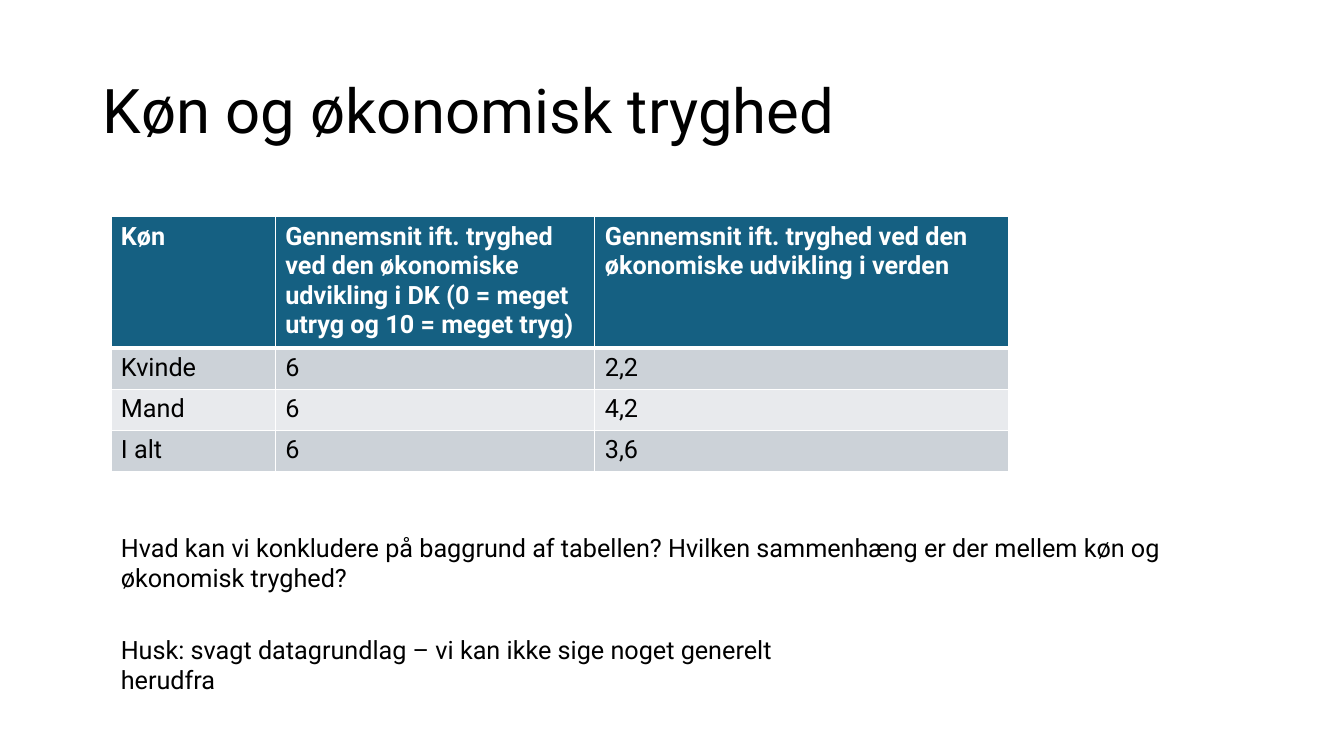
from dataclasses import dataclass

from lxml import etree
from pptx import Presentation
from pptx.dml.color import RGBColor
from pptx.enum import text
from pptx.oxml import ns
from pptx.util import Inches, Pt


@dataclass(frozen=True)
class Theme:
    font: str = "Roboto"
    title_size: int = 44
    body_size: int = 18
    ink: str = "000000"
    paper: str = "FFFFFF"
    header: str = "156082"
    bands: tuple = ("CCD2D8", "E8EAED")
    thin: int = 1
    thick: int = 3


THEME = Theme()

COLUMN_WIDTHS = (1.63, 3.17, 4.1)
HEADER_HEIGHT = 1.28
ROW_HEIGHT = 0.41
ROWS = (
    (
        "Køn",
        "Gennemsnit ift. tryghed ved den økonomiske udvikling i DK "
        "(0 = meget utryg og 10 = meget tryg)",
        "Gennemsnit ift. tryghed ved den økonomiske udvikling i verden",
    ),
    ("Kvinde", "6", "2,2"),
    ("Mand", "6", "4,2"),
    ("I alt", "6", "3,6"),
)


def add_run(paragraph, wording, size, color=THEME.ink, bold=False):
    run = paragraph.add_run()
    run.text = wording
    run.font.name = THEME.font
    run.font.size = Pt(size)
    run.font.bold = bold
    run.font.color.rgb = RGBColor.from_string(color)


def add_text(slide, wording, left, top, width, height, size=THEME.body_size,
             anchor=text.MSO_ANCHOR.TOP, line_spacing=1.0):
    box = slide.shapes.add_textbox(
        Inches(left), Inches(top), Inches(width), Inches(height))
    frame = box.text_frame
    frame.word_wrap = True
    frame.vertical_anchor = anchor
    paragraph = frame.paragraphs[0]
    paragraph.line_spacing = line_spacing
    add_run(paragraph, wording, size)


def add_borders(cell, row_index):
    widths = {"lnL": THEME.thin, "lnR": THEME.thin,
              "lnT": THEME.thick if row_index == 1 else THEME.thin,
              "lnB": THEME.thick if row_index == 0 else THEME.thin}
    properties = cell._tc.get_or_add_tcPr()
    for side, width in widths.items():
        line = etree.SubElement(properties, ns.qn(f"a:{side}"), w=str(Pt(width)))
        fill = etree.SubElement(line, ns.qn("a:solidFill"))
        etree.SubElement(fill, ns.qn("a:srgbClr"), val=THEME.paper)


def style_cell(cell, wording, row_index):
    is_header = row_index == 0
    background = THEME.header if is_header else THEME.bands[(row_index - 1) % 2]
    add_borders(cell, row_index)
    cell.fill.solid()
    cell.fill.fore_color.rgb = RGBColor.from_string(background)
    add_run(cell.text_frame.paragraphs[0], wording, THEME.body_size,
            THEME.paper if is_header else THEME.ink, is_header)


def add_gender_table(slide, left, top):
    heights = [HEADER_HEIGHT] + [ROW_HEIGHT] * (len(ROWS) - 1)
    table = slide.shapes.add_table(
        len(ROWS), len(COLUMN_WIDTHS), Inches(left), Inches(top),
        Inches(sum(COLUMN_WIDTHS)), Inches(sum(heights))).table
    for column, width in zip(table.columns, COLUMN_WIDTHS):
        column.width = Inches(width)
    for row_index, (row, height, wordings) in enumerate(
            zip(table.rows, heights, ROWS)):
        row.height = Inches(height)
        for cell, wording in zip(row.cells, wordings):
            style_cell(cell, wording, row_index)


def main():
    presentation = Presentation()
    presentation.slide_width = Inches(13.33)
    presentation.slide_height = Inches(7.5)
    slide = presentation.slides.add_slide(presentation.slide_layouts[6])

    add_text(slide, "Køn og økonomisk tryghed", 0.92, 0.4, 11.5, 1.45,
             THEME.title_size, text.MSO_ANCHOR.MIDDLE, 0.9)
    add_gender_table(slide, 1.1, 2.15)
    add_text(slide, "Hvad kan vi konkludere på baggrund af tabellen? Hvilken "
             "sammenhæng er der mellem køn og økonomisk tryghed?",
             1.1, 5.23, 11.02, 1.01)
    add_text(slide, "Husk: svagt datagrundlag – vi kan ikke sige noget "
             "generelt herudfra", 1.1, 6.24, 6.67, 0.71)

    presentation.save("out.pptx")


if __name__ == "__main__":
    main()
